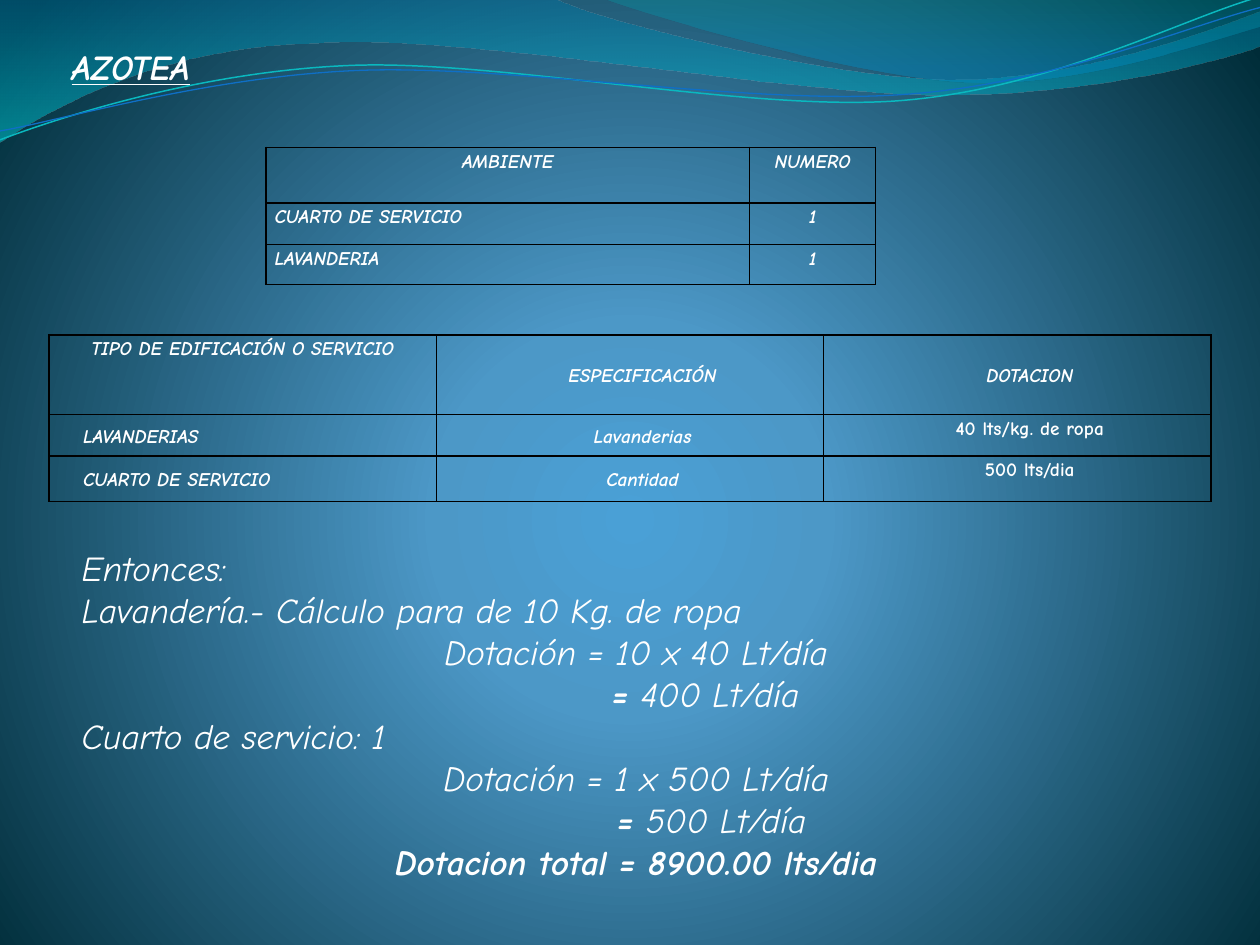
import math
from dataclasses import dataclass

from lxml import etree
from pptx import Presentation, util as u
from pptx.dml.color import RGBColor
from pptx.enum import text as t
from pptx.oxml import ns

FONT = "Comic Neue"
WHITE = "FFFFFF"
TILT = 2.7
LEFT, CENTER, JUSTIFY = t.PP_ALIGN.LEFT, t.PP_ALIGN.CENTER, t.PP_ALIGN.JUSTIFY
CIRCLE = {"l": "10000", "t": "110000", "r": "10000", "b": "100000"}


@dataclass
class Wave:
    """A start point followed by cubic curves (three points) and lines (one)."""
    start: tuple
    segments: list
    stops: tuple = ()
    line: str = ""
    width: float = 0
    center: tuple = ()


@dataclass
class Cell:
    text: str
    align: int = CENTER
    italic: bool = True
    indent: float = 0
    top: float = 0
    middle: bool = False
    before: float = 0
    after: float = 0


@dataclass
class Line:
    runs: list
    align: int = LEFT
    indent: float = 0


WAVES = [
    Wave((0, 0), [[(4.4, -0.01)], [(4.76, 0.17), (6.64, 0.63), (7.58, 0.63)],
                  [(8.53, 0.63), (9.58, 0.26), (10, 0.09)], [(10.01, 0.36)],
                  [(9.83, 0.44), (8.7, 0.76), (7.46, 0.75)],
                  [(6.22, 0.75), (3.82, 0.28), (2.57, 0.34)],
                  [(1.29, 0.36), (0.46, 0.83), (-0.01, 1.13)]],
         stops=((0, "0074A1", 45), (100, "00C6CF", 55))),
    Wave((4.79, -0.01), [[(5.09, 0.11), (6.82, 0.62), (7.69, 0.65)],
                         [(8.56, 0.69), (9.61, 0.32), (10, 0.21)], [(10, 0)]],
         stops=((0, "00A1A9", 30), (80, "008BBF", 45))),
    Wave((0, 1.11), [[(0.48, 0.93), (1.58, 0.57), (2.77, 0.52)],
                     [(3.95, 0.47), (5.93, 0.89), (7.13, 0.8)],
                     [(8.33, 0.71), (9.38, 0.15), (9.98, -0.02)]],
         line="0AB8BF", width=0.85, center=(4.99, 0.57)),
    Wave((0, 1.04), [[(0.47, 0.96), (1.64, 0.61), (2.83, 0.56)],
                     [(4.03, 0.51), (5.97, 0.84), (7.17, 0.75)],
                     [(8.36, 0.67), (9.41, 0.21), (10, 0.06)]],
         line="0F6FC6", width=0.75, center=(5, 0.59)),
]


def color(value: str) -> RGBColor:
    return RGBColor.from_string(value)


def child(parent, tag: str, **attrs):
    return etree.SubElement(parent, ns.qn(tag), attrs)


def set_gradient(owner, stops, circle=None) -> None:
    """Replace the empty fill of a shape or slide with a gradient."""
    empty = owner.element.find(".//" + ns.qn("a:noFill"))
    grad = etree.Element(ns.qn("a:gradFill"), rotWithShape="1")
    stop_list = child(grad, "a:gsLst")
    for pos, value, opacity in stops:
        gs = child(stop_list, "a:gs", pos=str(pos * 1000))
        clr = child(gs, "a:srgbClr", val=value)
        child(clr, "a:alpha", val=str(opacity * 1000))
    if circle:
        child(child(grad, "a:path", path="circle"), "a:fillToRect", **circle)
    else:
        child(grad, "a:lin", ang="5400000", scaled="0")
    empty.getparent().replace(empty, grad)


def place(wave: Wave, point: tuple) -> tuple:
    """Give a point in EMU, levelled when the wave is drawn tilted."""
    x, y = point
    if wave.center:
        cx, cy = wave.center
        sin, cos = math.sin(math.radians(TILT)), math.cos(math.radians(TILT))
        x, y = (cx + (x - cx) * cos - (y - cy) * sin,
                cy + (x - cx) * sin + (y - cy) * cos)
    return u.Inches(x), u.Inches(y)


def add_wave(s, wave: Wave) -> None:
    segments = [[place(wave, pt) for pt in seg] for seg in wave.segments]
    builder = s.shapes.build_freeform(*place(wave, wave.start))
    builder.add_line_segments([seg[-1] for seg in segments], close=bool(wave.stops))
    sp = builder.convert_to_shape()
    for straight, seg in zip(sp.element.findall(".//" + ns.qn("a:lnTo")), segments):
        if len(seg) == 3:
            curve = etree.Element(ns.qn("a:cubicBezTo"))
            for x, y in seg:
                child(curve, "a:pt", x=str(x - sp.left), y=str(y - sp.top))
            straight.getparent().replace(straight, curve)
    sp.shadow.inherit = False
    sp.fill.background()
    if wave.stops:
        set_gradient(sp, wave.stops)
        sp.line.fill.background()
    else:
        sp.rotation = 360 - TILT
        sp.line.color.rgb = color(wave.line)
        sp.line.width = u.Pt(wave.width)


def add_run(p, text: str, size: float, **style) -> None:
    r = p.add_run()
    r.text = text
    for name, value in {"name": FONT, "size": u.Pt(size), **style}.items():
        setattr(r.font, name, value)
    r.font.color.rgb = color(WHITE)


def indent(p, inches: float) -> None:
    p._p.get_or_add_pPr().set("marL", str(u.Inches(inches)))


def fill_cell(cell, item: Cell) -> None:
    cell.fill.background()
    margins = {"margin_left": 0.07, "margin_right": 0.07,
               "margin_top": item.top, "margin_bottom": 0}
    for name, value in margins.items():
        setattr(cell, name, u.Inches(value))
    cell.vertical_anchor = t.MSO_ANCHOR.MIDDLE if item.middle else t.MSO_ANCHOR.TOP
    p = cell.text_frame.paragraphs[0]
    formats = {"alignment": item.align, "line_spacing": 1.15,
               "space_before": u.Pt(item.before), "space_after": u.Pt(item.after)}
    for name, value in formats.items():
        setattr(p, name, value)
    indent(p, item.indent)
    add_run(p, item.text, 11, bold=True, italic=item.italic)
    props = cell._tc.get_or_add_tcPr()
    for i, side in enumerate(("a:lnL", "a:lnR", "a:lnT", "a:lnB")):
        ln = etree.Element(ns.qn(side), w=str(u.Pt(1)))
        child(child(ln, "a:solidFill"), "a:srgbClr", val="000000")
        props.insert(i, ln)


def add_table(s, left: float, top: float, cols: list, heights: list, rows: list) -> None:
    frame = s.shapes.add_table(len(rows), len(cols), u.Inches(left), u.Inches(top),
                               u.Inches(sum(cols)), u.Inches(sum(heights)))
    table = frame.table
    table.first_row = table.horz_banding = False
    for col, width in zip(table.columns, cols):
        col.width = u.Inches(width)
    for row, height, items in zip(table.rows, heights, rows):
        row.height = u.Inches(height)
        for cell, item in zip(row.cells, items):
            fill_cell(cell, item)


def add_text(s, box: tuple, lines: list, **style) -> None:
    tf = s.shapes.add_textbox(*map(u.Inches, box)).text_frame
    tf.word_wrap = True
    for i, line in enumerate(lines):
        p = tf.add_paragraph() if i else tf.paragraphs[0]
        p.alignment = line.align
        indent(p, line.indent)
        for text, bold in line.runs:
            add_run(p, text, 20, bold=bold, italic=True, **style)


def room_row(name: str, number: str, align: int = JUSTIFY) -> list:
    return [Cell(name, align, before=24), Cell(number, before=24)]


def supply_row(kind: str, detail: str, supply: str) -> list:
    spaced = {"indent": 0.2, "after": 6}
    return [Cell(kind, LEFT, middle=True, **spaced), Cell(detail, middle=True, **spaced),
            Cell(supply, italic=False, **spaced)]


def main() -> None:
    prs = Presentation()
    prs.slide_width, prs.slide_height = u.Inches(10), u.Inches(7.5)
    s = prs.slides.add_slide(prs.slide_layouts[6])
    s.background.fill.background()
    set_gradient(s, ((0, "4AA0D6", 100), (25, "4C98C7", 100), (100, "002C38", 100)), CIRCLE)
    for wave in WAVES:
        add_wave(s, wave)
    add_text(s, (0.47, 0.31, 9, 0.7), [Line([("AZOTEA", True)])], underline=True)
    add_table(s, 2.11, 1.17, [3.84, 1], [0.44, 0.33, 0.32], [
        room_row("AMBIENTE", "NUMERO", CENTER),
        room_row("CUARTO DE SERVICIO", "1"),
        room_row("LAVANDERIA", "1")])
    heads = [Cell(name, indent=0.2, top=0.21, after=6)
             for name in ("ESPECIFICACIÓN", "DOTACION")]
    add_table(s, 0.39, 2.66, [9.22 / 3] * 3, [0.63, 0.33, 0.36], [
        [Cell("TIPO DE EDIFICACIÓN O SERVICIO", before=24), *heads],
        supply_row("LAVANDERIAS", "Lavanderias", "40 lts/kg. de ropa"),
        supply_row("CUARTO DE SERVICIO", "Cantidad", "500 lts/dia")])
    add_text(s, (0.55, 4.29, 9, 2.89), [
        Line([("Entonces:", False)]),
        Line([("Lavandería.- Cálculo para de 10 Kg. de ropa", False)]),
        Line([("Dotación = 10 x 40 Lt/día", False)], CENTER),
        Line([("= ", True), ("400 Lt/día", False)], CENTER, 1.1),
        Line([("Cuarto de servicio: 1", False)]),
        Line([("Dotación = 1 x 500 Lt/día", False)], CENTER),
        Line([("= ", True), ("500 Lt/día", False)], CENTER, 1.2),
        Line([("Dotacion total = 8900.00 lts/dia", True)], CENTER)])
    prs.save("out.pptx")


if __name__ == "__main__":
    main()
